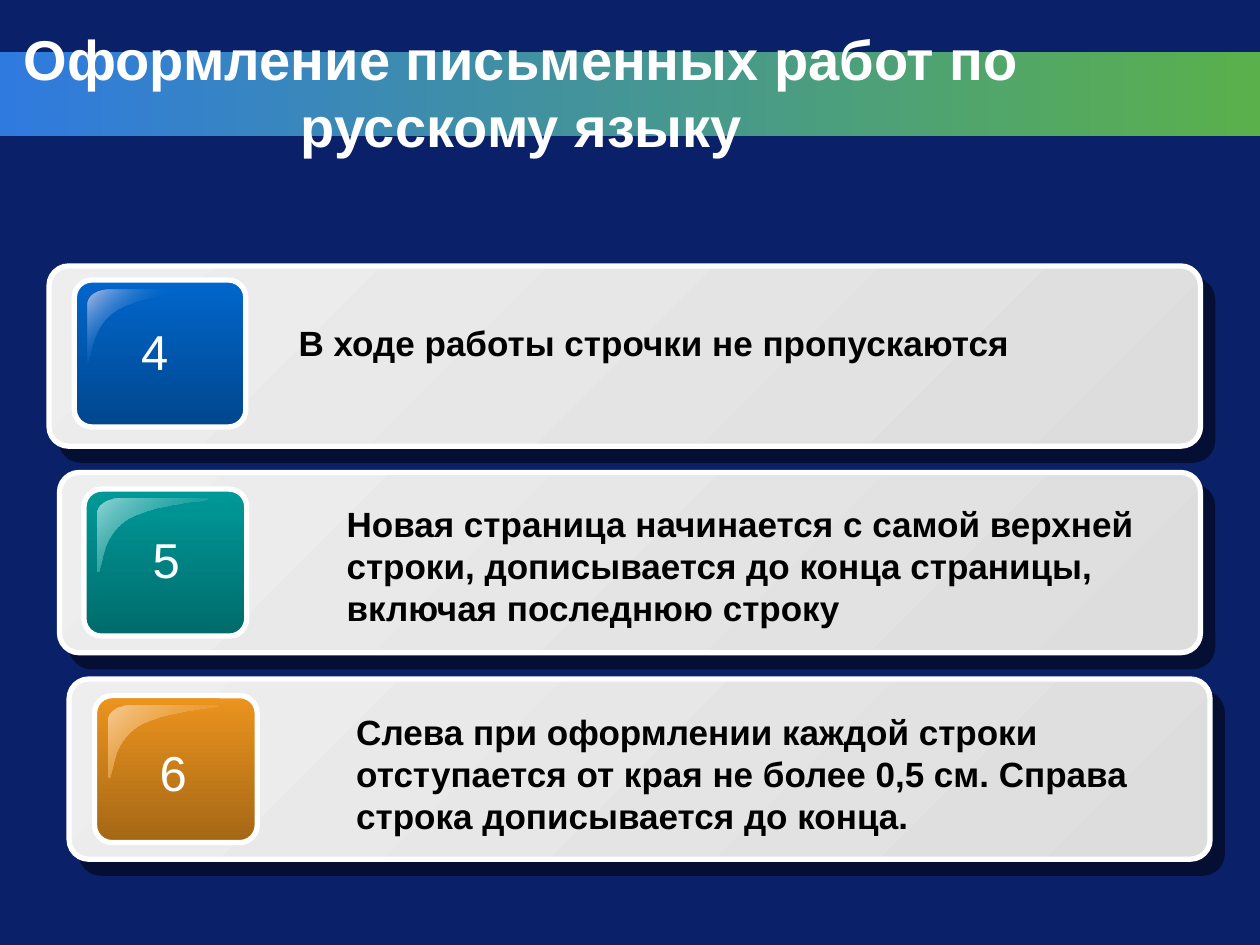
from dataclasses import dataclass

from lxml.etree import SubElement
from pptx import Presentation
from pptx.dml.color import RGBColor as Rgb
from pptx.enum.shapes import MSO_SHAPE as Shape
from pptx.enum.text import MSO_ANCHOR as Anchor, PP_ALIGN as Align
from pptx.oxml.ns import qn
from pptx.util import Pt


@dataclass(frozen=True)
class Theme:
    font: str = "Arial"
    background: str = "0A2068"
    light: str = "FFFFFF"
    dark: str = "000000"
    band: tuple = ("2F7ADF", "5AB14B")
    panel: tuple = ("EEEEEE", "DDDDDD")
    title_size: int = 32
    number_size: int = 28
    body_size: int = 20
    border: int = 3


@dataclass(frozen=True)
class Card:
    number: str
    text: str
    panel: tuple
    badge: tuple
    number_at: tuple
    text_at: tuple
    colors: tuple
    shine: str
    fade: float = 1.0


CARDS = (
    Card("4", "В ходе работы строчки не пропускаются",
         (28, 152, 658, 103), (42.5, 160, 98, 84), (73.5, 180, 30, 41),
         (163.5, 180, 507.5, 31.5), ("0066CC", "00478E"), "B5C0E5", 0.5),
    Card("5", "Новая страница начинается с самой верхней строки, "
         "дописывается до конца страницы, включая последнюю строку",
         (34, 270, 652, 103), (48, 279.5, 93, 84), (80, 299, 30, 41),
         (191, 283.5, 479.5, 80), ("009999", "006B6B"), "93D4D4"),
    Card("6", "Слева при оформлении каждой строки отступается от края "
         "не более 0,5 см. Справа строка дописывается до конца.",
         (39.5, 388, 652, 103), (54, 397.5, 93, 84), (84, 420.5, 30, 41),
         (196.5, 402.5, 479.5, 80), ("EC941E", "A56715"), "F6CB92"),
)


def curve(start, first, second, end, steps=12):
    """Return points along a cubic curve, without its start."""
    points = []
    for step in range(1, steps + 1):
        t = step / steps
        weights = ((1 - t) ** 3, 3 * t * (1 - t) ** 2, 3 * t * t * (1 - t), t ** 3)
        points.append(tuple(sum(w * point[axis] for w, point in
                                zip(weights, (start, first, second, end)))
                            for axis in (0, 1)))
    return points


class SlideBuilder:
    """Draw styled elements on the current slide or group."""

    def __init__(self, slide, theme):
        self.slide, self.theme, self.shapes = slide, theme, slide.shapes
        slide.background.fill.solid()
        slide.background.fill.fore_color.rgb = Rgb.from_string(theme.background)

    def gradient(self, shape, colors, angle):
        shape.shadow.inherit = False
        shape.line.fill.background()
        shape.fill.gradient()
        shape.fill.gradient_angle = (360 - angle) % 360
        for stop, color in zip(shape.fill.gradient_stops, colors):
            stop.color.rgb = Rgb.from_string(color)

    def band(self, area):
        shape = self.shapes.add_shape(Shape.RECTANGLE, *map(Pt, area))
        self.gradient(shape, self.theme.band, 0)

    def rounded(self, area, radius, colors, angle):
        shape = self.shapes.add_shape(Shape.ROUNDED_RECTANGLE, *map(Pt, area))
        shape.adjustments[0] = radius
        self.gradient(shape, colors, angle)
        shape.line.color.rgb = Rgb.from_string(self.theme.light)
        shape.line.width = Pt(self.theme.border)
        return shape

    def drop_shadow(self, shape):
        effects = shape._element.spPr.find(qn("a:effectLst"))
        shadow = SubElement(effects, qn("a:outerShdw"), dist=str(Pt(10.6)),
                            dir=str(49 * 60000), algn="ctr", rotWithShape="0")
        color = SubElement(shadow, qn("a:srgbClr"), val=self.theme.dark)
        SubElement(color, qn("a:alpha"), val="50000")

    def gloss(self, left, top, shine, base, fade):
        outline = (curve((12.5, 0), (5.5, 0), (0, 3.5), (0, 8.5)) + [(0, 41.5)]
                   + curve((0, 41.5), (3, 42.5), (1, 21.5), (17, 12))
                   + curve((17, 12), (33, 2.5), (63, 2), (62.5, 0)))
        builder = self.shapes.build_freeform(Pt(left + 12.5), Pt(top))
        builder.add_line_segments([(Pt(left + x), Pt(top + y)) for x, y in outline])
        shape = builder.convert_to_shape()
        self.gradient(shape, (shine, base), 45)
        shape.fill.gradient_stops[1].position = fade
        last = shape._element.spPr.findall(".//" + qn("a:srgbClr"))[-1]
        SubElement(last, qn("a:alpha"), val="0")

    def text(self, area, words, size, color, bold=True, align=Align.LEFT,
             anchor=Anchor.TOP, wrap=True):
        frame = self.shapes.add_textbox(*map(Pt, area)).text_frame
        frame.word_wrap = wrap
        frame.vertical_anchor = anchor
        frame.text = words
        para = frame.paragraphs[0]
        para.alignment = align
        font = para.runs[0].font
        font.name, font.size, font.bold = self.theme.font, Pt(size), bold
        font.color.rgb = Rgb.from_string(color)

    def card(self, card):
        theme = self.theme
        self.shapes = self.slide.shapes.add_group_shape().shapes
        self.drop_shadow(self.rounded(card.panel, 0.109, theme.panel, 45))
        self.rounded(card.badge, 0.119, card.colors, 90)
        left, top = card.badge[:2]
        self.gloss(left + 7.75, top + 5.5, card.shine, card.colors[0], card.fade)
        self.text(card.number_at, card.number, theme.number_size, theme.light,
                  bold=False, align=Align.CENTER, wrap=False)
        self.text(card.text_at, card.text, theme.body_size, theme.dark)
        self.shapes = self.slide.shapes


def main():
    deck = Presentation()
    deck.slide_width, deck.slide_height = Pt(720), Pt(540)
    theme = Theme()
    page = SlideBuilder(deck.slides.add_slide(deck.slide_layouts[6]), theme)
    page.band((0, 30, 720, 48))
    page.text((0, 30, 596, 45), "Оформление письменных работ по русскому языку",
              theme.title_size, theme.light, align=Align.CENTER, anchor=Anchor.MIDDLE)
    for card in CARDS:
        page.card(card)
    deck.save("out.pptx")


if __name__ == "__main__":
    main()
